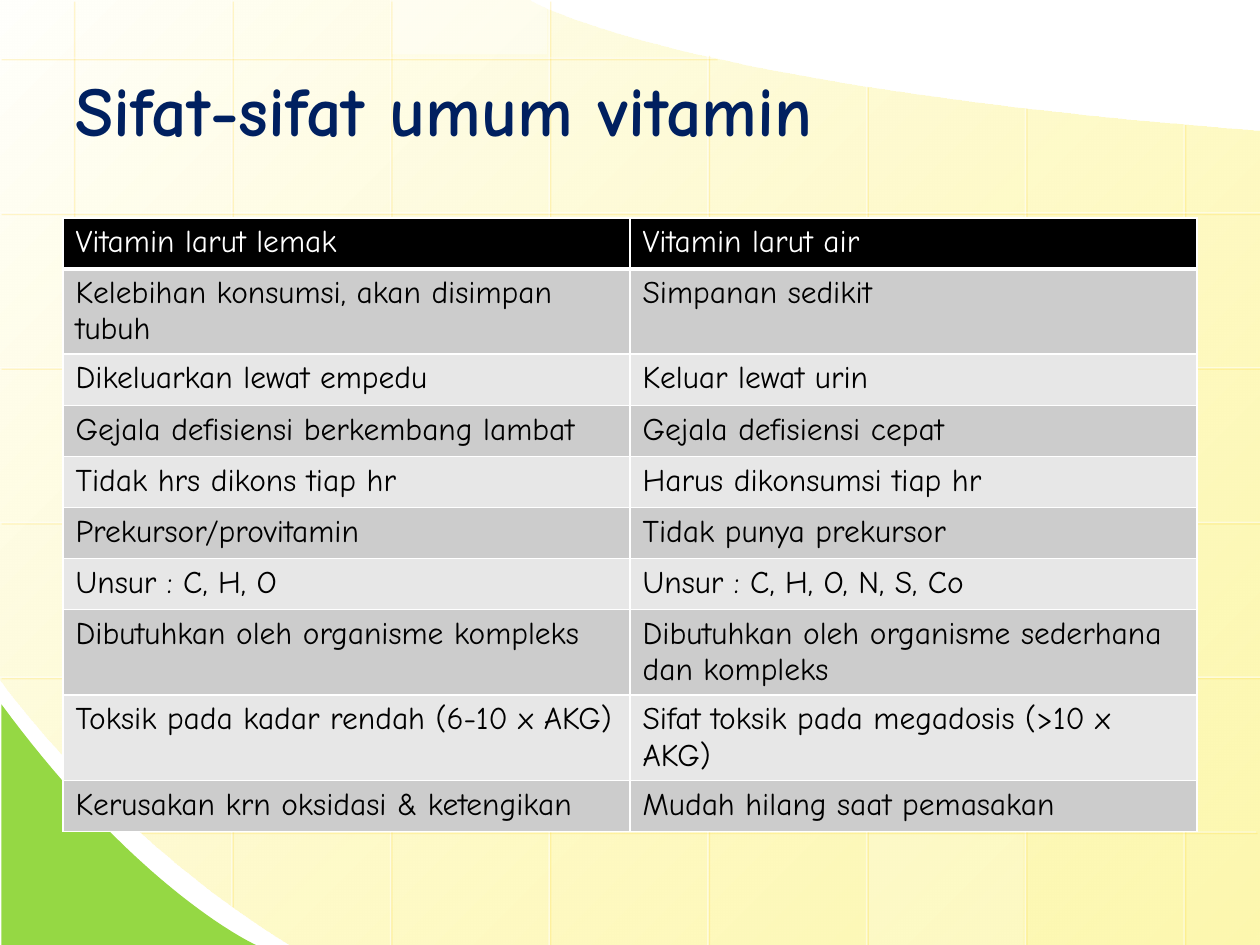
from lxml.etree import SubElement
from pptx import Presentation
from pptx.dml.color import RGBColor
from pptx.enum.shapes import MSO_CONNECTOR as Connector, MSO_SHAPE as Shape
from pptx.enum.text import MSO_ANCHOR as Anchor, PP_ALIGN as Align
from pptx.oxml.ns import qn
from pptx.util import Cm, Pt

WIDTH, HEIGHT = 25.4, 19.05
FONT = "Comic Neue"
STEP_X, STEP_Y = 3.2, 3.12
FIRST_X, FIRST_Y = 1.47, 1.17

# Start and end of each grid line along its own direction
COLUMN_SPANS = [(0, 15.47), (0, 18.26), (0, HEIGHT), (0, HEIGHT),
                (1.09, HEIGHT), (1.73, HEIGHT), (2.16, HEIGHT), (2.49, HEIGHT)]
ROW_SPANS = [(14.43, 0)] + [(WIDTH, 0)] * 4 + [(25.32, 2.82)]
# Grid column, grid row and opacity of each light tile; row -1 touches the top
TILES = [(3, 2, 25), (6, 4, 30), (0, 3, 20), (5, 5, 20),
         (2, -1, 40), (2, 4, 30), (5, 1, 30)]

ROWS = [
    ("Vitamin larut lemak", "Vitamin larut air"),
    ("Kelebihan konsumsi, akan disimpan tubuh", "Simpanan sedikit"),
    ("Dikeluarkan lewat empedu", "Keluar lewat urin"),
    ("Gejala defisiensi berkembang lambat", "Gejala defisiensi cepat"),
    ("Tidak hrs dikons tiap hr", "Harus dikonsumsi tiap hr"),
    ("Prekursor/provitamin", "Tidak punya prekursor"),
    ("Unsur : C, H, O", "Unsur : C, H, O, N, S, Co"),
    ("Dibutuhkan oleh organisme kompleks",
     "Dibutuhkan oleh organisme sederhana dan kompleks"),
    ("Toksik pada kadar rendah (6-10 x AKG)",
     "Sifat toksik pada megadosis (>10 x AKG)"),
    ("Kerusakan krn oksidasi & ketengikan", "Mudah hilang saat pemasakan"),
]


def rgb(value):
    return RGBColor.from_string(value)


def set_opacity(parent, percent):
    """Make the colour found inside an XML element partly transparent."""
    colour = next(parent.iter(qn("a:srgbClr")))
    SubElement(colour, qn("a:alpha"), val=str(percent * 1000))


def add_shadow(parent, colour, percent, distance):
    effects = SubElement(parent, qn("a:effectLst"))
    shadow = SubElement(effects, qn("a:outerShdw"), dist=str(Pt(distance)),
                        dir="2700000", algn="ctr", rotWithShape="0")
    SubElement(shadow, qn("a:srgbClr"), val=colour)
    set_opacity(shadow, percent)


def curve(start, control1, control2, end, steps=40):
    """Return points along a cubic curve."""
    points = []
    for i in range(steps + 1):
        t = i / steps
        weights = ((1 - t) ** 3, 3 * t * (1 - t) ** 2, 3 * t ** 2 * (1 - t), t ** 3)
        points.append(tuple(
            sum(w * p[axis] for w, p in zip(weights, (start, control1, control2, end)))
            for axis in (0, 1)))
    return points


def add_outline(slide, points):
    corners = [(Cm(x), Cm(y)) for x, y in points]
    builder = slide.shapes.build_freeform(*corners[0])
    builder.add_line_segments(corners[1:], close=True)
    shape = builder.convert_to_shape()
    shape.shadow.inherit = False
    shape.line.fill.background()
    return shape


def add_backdrop(slide):
    top = curve((10.67, 0), (10.67, 0.03), (13.61, 1.75), (WIDTH, 2.64))
    bottom = curve((5.84, HEIGHT), (2.18, 16.79), (0, 13.69), (0, 13.69))
    field = add_outline(slide, top + [(WIDTH, HEIGHT)] + bottom + [(0, 0)])
    field.fill.gradient()
    field.fill.gradient_angle = 315
    stops = field.fill.gradient_stops
    for stop, position, colour in zip(stops, (0, 1), ("FFFFFC", "FDF58D")):
        stop.position = position
        stop.color.rgb = rgb(colour)
    set_opacity(list(field._element.iter(qn("a:gs")))[1], 70)

    edge = curve((5.16, HEIGHT), (5.16, HEIGHT), (2.84, 18.01), (0.03, 14.2))
    corner = add_outline(slide, edge + [(0.03, HEIGHT)])
    corner.fill.solid()
    corner.fill.fore_color.rgb = rgb("95D844")


def add_grid_line(slide, x1, y1, x2, y2):
    line = slide.shapes.add_connector(
        Connector.STRAIGHT, Cm(x1), Cm(y1), Cm(x2), Cm(y2))
    line.line.width = Pt(0.75)
    line.line.color.rgb = rgb("FFFFFF")
    properties = line._element.spPr
    set_opacity(properties, 50)
    add_shadow(properties, "FFCC00", 35, 1.4)


def add_tile(slide, column, row, opacity):
    left = FIRST_X + column * STEP_X + 0.04
    top = max(0, FIRST_Y + row * STEP_Y + 0.05)
    bottom = min(HEIGHT, FIRST_Y + (row + 1) * STEP_Y - 0.07)
    tile = slide.shapes.add_shape(
        Shape.RECTANGLE, Cm(left), Cm(top), Cm(3.12), Cm(bottom - top))
    tile.shadow.inherit = False
    tile.line.fill.background()
    tile.fill.solid()
    tile.fill.fore_color.rgb = rgb("FFFFFF")
    set_opacity(tile._element.spPr, opacity)


def add_grid(slide):
    for i, (start, end) in enumerate(COLUMN_SPANS):
        x = FIRST_X + i * STEP_X
        add_grid_line(slide, x, start, x, end)
    for i, (start, end) in enumerate(ROW_SPANS):
        y = FIRST_Y + i * STEP_Y
        add_grid_line(slide, start, y, end, y)
    for tile in TILES:
        add_tile(slide, *tile)


def format_font(para, size, colour, bold=False):
    para.font.name = FONT
    para.font.size = Pt(size)
    para.font.bold = bold
    para.font.color.rgb = rgb(colour)


def set_title(slide, text):
    title = slide.shapes.title
    slide.shapes._spTree.append(title._element)  # in front of the backdrop
    title.left, title.top, title.width, title.height = Cm(1.27), Cm(0.91), Cm(22.86), Cm(2.57)
    title.text_frame.text = text
    title.text_frame.vertical_anchor = Anchor.MIDDLE
    para = title.text_frame.paragraphs[0]
    para.alignment = Align.LEFT
    format_font(para, 40, "002060", bold=True)
    add_shadow(para.runs[0]._r.get_or_add_rPr(), "FFFFFF", 100, 2)


def set_borders(cell, bottom_width):
    properties = cell._tc.get_or_add_tcPr()
    for side, width in zip("LRTB", (1, 1, 1, bottom_width)):
        border = SubElement(properties, qn(f"a:ln{side}"), w=str(Pt(width)))
        fill = SubElement(border, qn("a:solidFill"))
        SubElement(fill, qn("a:srgbClr"), val="FFFFFF")


def add_vitamin_table(slide):
    table = slide.shapes.add_table(
        len(ROWS), 2, Cm(1.27), Cm(4.39), Cm(22.86), Cm(10.3)).table
    for i, texts in enumerate(ROWS):
        header = i == 0
        fill = "000000" if header else ("E7E7E7", "CCCCCC")[i % 2]
        for cell, text in zip(table.rows[i].cells, texts):
            set_borders(cell, 3 if header else 1)
            cell.fill.solid()
            cell.fill.fore_color.rgb = rgb(fill)
            cell.text = text
            format_font(cell.text_frame.paragraphs[0], 18,
                        "FFFFFF" if header else "000000")


def main():
    deck = Presentation()
    deck.slide_width, deck.slide_height = Cm(WIDTH), Cm(HEIGHT)
    slide = deck.slides.add_slide(deck.slide_layouts[5])
    add_backdrop(slide)
    add_grid(slide)
    set_title(slide, "Sifat-sifat umum vitamin")
    add_vitamin_table(slide)
    deck.save("out.pptx")


if __name__ == "__main__":
    main()
